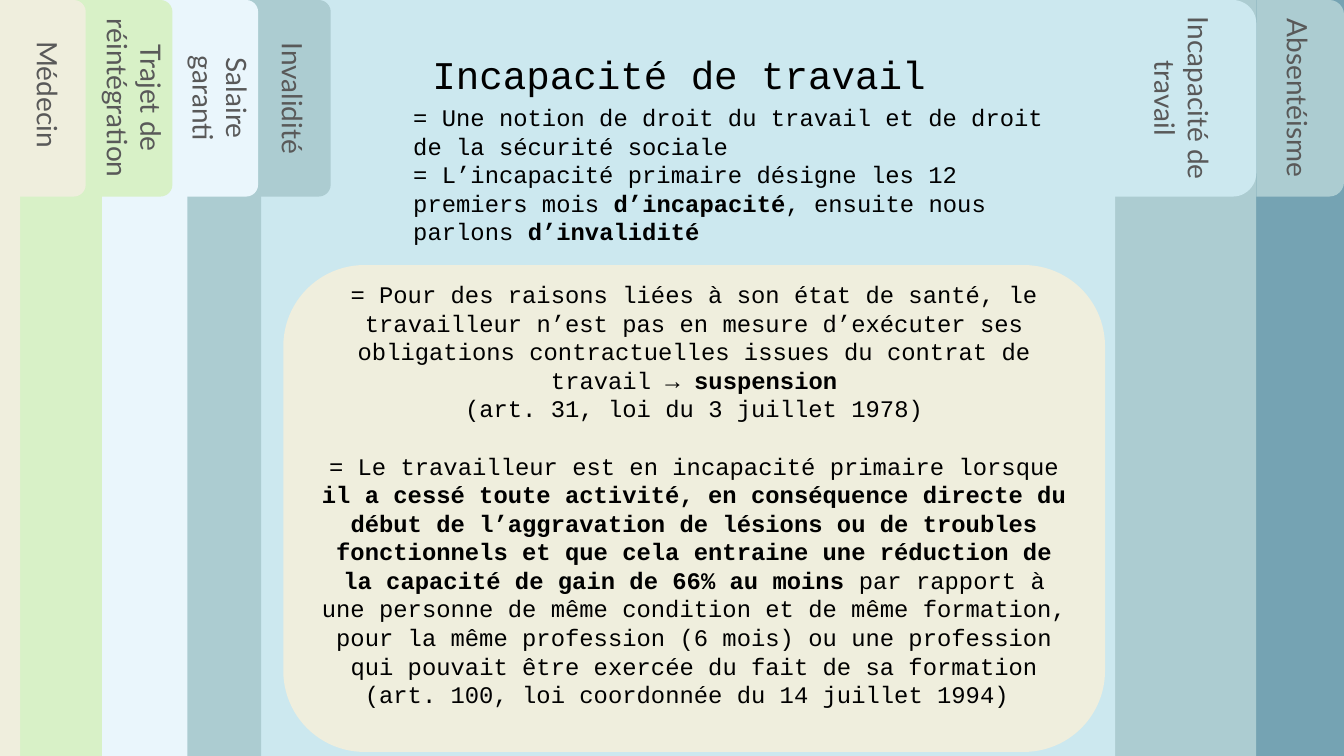
from pptx import Presentation
from pptx.dml.color import RGBColor
from pptx.enum.shapes import MSO_SHAPE as SHAPE
from pptx.enum.text import MSO_ANCHOR as ANCHOR, PP_ALIGN as ALIGN
from pptx.util import Inches, Pt

W, H = 13.33, 7.5
TAB = 1.95
LINE = 0.284  # height of one 17 pt line


def add_block(kind, x, y, w, h, color):
    sp = s.shapes.add_shape(kind, Inches(x), Inches(y), Inches(w), Inches(h))
    sp.shadow.inherit = False
    sp.fill.solid()
    sp.fill.fore_color.rgb = RGBColor.from_string(color)
    sp.line.fill.background()
    return sp


def add_text(tf, paragraphs, size, font="Courier New", color="000000", align=ALIGN.LEFT):
    """Fill a frame; every second run of a paragraph is bold."""
    tf.word_wrap = True
    for i, runs in enumerate(paragraphs):
        p = tf.add_paragraph() if i else tf.paragraphs[0]
        p.alignment = align
        for j, text in enumerate(runs):
            r = p.add_run()
            r.text = text
            r.font.size = Pt(size)
            r.font.name = font
            r.font.bold = j % 2 == 1
            r.font.color.rgb = RGBColor.from_string(color)


prs = Presentation()
prs.slide_width, prs.slide_height = Inches(W), Inches(H)
s = prs.slides.add_slide(prs.slide_layouts[6])
s.background.fill.solid()
s.background.fill.fore_color.rgb = RGBColor.from_string("75A3B3")

# Stacked folders: label, colour, page right edge, tab left edge, tab depth
folders = [
    ("Absentéisme", "ACCCD1", 12.46, 12.46, 0.87),
    ("Incapacité de travail", "CCE8EF", 11.06, 11.06, 1.4),
    ("Invalidité", "ACCCD1", 2.59, 2.57, 0.71),
    ("Salaire garanti", "EAF6FC", 1.86, 1.85, 0.71),
    ("Trajet de réintégration", "D8F1C7", 1.01, 1, 0.71),
    ("Médecin ", "EFEEDD", 0.2, 0.14, 0.71),
]
for label, color, edge, left, depth in folders:
    add_block(SHAPE.RECTANGLE, 0, 0, edge, H, color)
    shift = (TAB - depth) / 2
    tab = add_block(SHAPE.ROUND_2_SAME_RECTANGLE, left - shift, shift, TAB, depth, color)
    tab.rotation = 90
    tab.text_frame.vertical_anchor = ANCHOR.MIDDLE
    add_text(tab.text_frame, [[label]], 20, "Lato", "595959", ALIGN.CENTER)

title = s.shapes.add_textbox(Inches(4.19), Inches(0.45), Inches(5.59), Inches(0.57))
add_text(title.text_frame, [["Incapacité de travail"]], 28)

intro = s.shapes.add_textbox(Inches(4), Inches(0.97), Inches(6.68), Inches(1.53))
add_text(intro.text_frame, [
    ["= Une notion de droit du travail et de droit de la sécurité sociale"],
    ["= L’incapacité primaire désigne les 12 premiers mois ", "d’incapacité",
     ", ensuite nous parlons ", "d’invalidité"],
], 17)

card = add_block(SHAPE.ROUNDED_RECTANGLE, 2.81, 2.63, 8.15, 4.83, "EFEEDD")
tf = card.text_frame
tf.vertical_anchor = ANCHOR.MIDDLE
tf.margin_bottom = Inches(0.05 + LINE)
add_text(tf, [
    ["= Pour des raisons liées à son état de santé, le travailleur n’est pas en mesure "
     "d’exécuter ses obligations contractuelles issues du contrat de travail → ",
     "suspension"],
    ["(art. 31, loi du 3 juillet 1978)"],
    ["= Le travailleur est en incapacité primaire lorsque ",
     "il a cessé toute activité, en conséquence directe du début de l’aggravation de "
     "lésions ou de troubles fonctionnels et que cela entraine une réduction de la "
     "capacité de gain de 66% au moins ",
     "par rapport à une personne de même condition et de même formation, pour la même "
     "profession (6 mois) ou une profession qui pouvait être exercée du fait de sa formation"],
    ["(art. 100, loi coordonnée du 14 juillet 1994) "],
], 17, align=ALIGN.CENTER)
tf.paragraphs[2].space_before = Inches(LINE)

prs.save("out.pptx")
